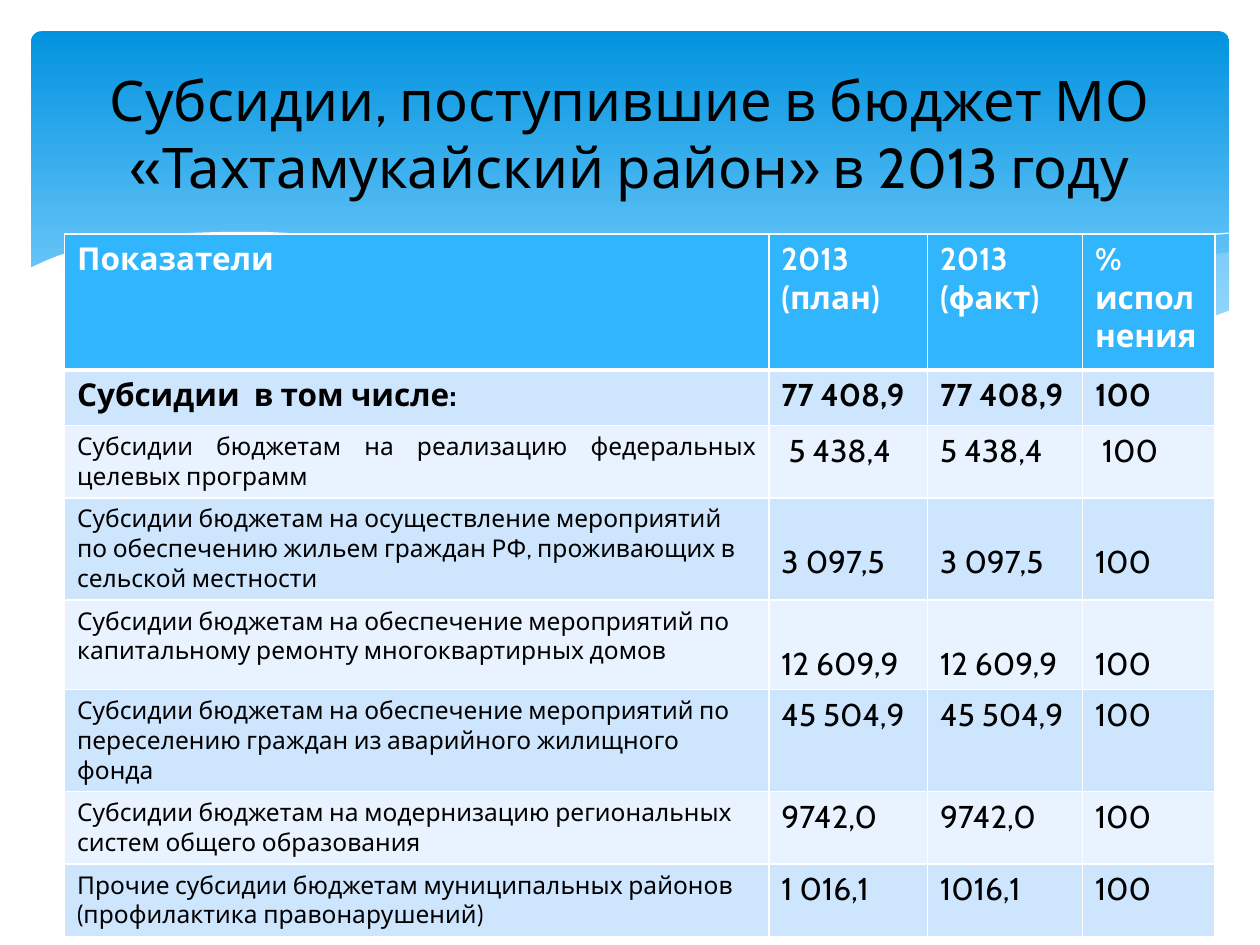
"""Build the slide on subsidies received by the district budget in 2013."""
from lxml import etree
from pptx import Presentation
from pptx.dml.color import RGBColor
from pptx.enum.shapes import MSO_SHAPE as SHAPE
from pptx.enum.text import MSO_ANCHOR as ANCHOR, PP_ALIGN as ALIGN
from pptx.oxml.ns import qn
from pptx.util import Cm, Pt

FONT = "Cabin"
WHITE, BLACK, HEAD = "FFFFFF", "000000", "31B6FD"
BANDS = ("CEE5FE", "E8F3FF")
TITLE = "Субсидии, поступившие в бюджет МО «Тахтамукайский район» в 2013 году"
ROWS = [
    ("Показатели", "2013 (план)", "2013 (факт)", "% исполнения"),
    ("Субсидии  в том числе:", "77 408,9", "77 408,9", "100"),
    ("Субсидии бюджетам на реализацию федеральных целевых программ", " 5 438,4", "5 438,4", " 100"),
    ("Субсидии бюджетам на осуществление мероприятий по обеспечению жильем граждан РФ, "
     "проживающих в сельской местности", "3 097,5", "3 097,5", "100"),
    ("Субсидии бюджетам на обеспечение мероприятий по капитальному ремонту многоквартирных домов",
     "12 609,9", "12 609,9", "100"),
    ("Субсидии бюджетам на обеспечение мероприятий по переселению граждан из аварийного жилищного фонда",
     "45 504,9", "45 504,9", "100"),
    ("Субсидии бюджетам на модернизацию региональных систем общего образования", "9742,0", "9742,0", "100"),
    ("Прочие субсидии бюджетам муниципальных районов (профилактика правонарушений)",
     "1 016,1", "1016,1", "100"),
]
COL_W = (14.2, 3.2, 3.12, 2.67)
ROW_H = (2.74, 1.12, 1.45, 2.06, 1.8, 2.06, 1.45, 1.45)
LOWERED, JUSTIFIED = (3, 4), 2

WAVE_UNIT = Cm(0.0254)
WAVES = [
    dict(fill="C6E7FC", alpha=29, pts=[
        (976, 200), (948, 204), (906, 213), (861, 223), (805, 237), (753, 248), (706, 257), (661, 265),
        (705, 271), (757, 276), (803, 278), (844, 277), (881, 273), (913, 267), (942, 259), (976, 247)]),
    dict(fill="C6E7FC", alpha=40, pts=[
        (893, 273), (837, 265), (775, 254), (706, 240), (629, 222), (584, 211), (541, 203), (502, 196),
        (465, 191), (420, 187), (380, 185), (344, 186), (313, 188), (286, 191), (342, 199), (404, 211),
        (449, 222), (530, 240), (601, 255), (665, 266), (722, 274), (773, 277), (818, 278), (857, 277)]),
    dict(line=WHITE, pts=[
        (309, 195), (344, 190), (387, 187), (433, 187), (489, 190), (556, 197), (636, 208), (727, 226),
        (795, 241), (869, 261), (907, 272)]),
    dict(line=WHITE, pts=[
        (613, 257), (672, 241), (748, 223), (806, 210), (866, 199), (910, 192), (951, 187), (975, 185)]),
    dict(fill=WHITE, pts=[
        (977, 246), (950, 256), (920, 265), (887, 271), (850, 275), (809, 277), (761, 275), (708, 270),
        (648, 262), (579, 250), (503, 233), (447, 220), (391, 207), (340, 197), (292, 190), (250, 186),
        (211, 184), (177, 184), (146, 185), (119, 187), (95, 191), (76, 195), (59, 199), (46, 203),
        (36, 207), (23, 213), (23, 329), (977, 329)]),
]


def rgb(value):
    return RGBColor.from_string(value)


def write(tf, text, size=18, color=BLACK, bold=False, align=ALIGN.LEFT):
    tf.word_wrap = True
    p = tf.paragraphs[0]
    p.alignment = align
    r = p.add_run()
    r.text = text
    r.font.name, r.font.size, r.font.bold = FONT, Pt(size), bold
    r.font.color.rgb = rgb(color)


def add_wave(s, pts, fill=None, alpha=100, line=None):
    builder = s.shapes.build_freeform(*pts[0], scale=WAVE_UNIT)
    builder.add_line_segments(pts[1:], close=fill is not None)
    sp = builder.convert_to_shape()
    sp.shadow.inherit = False
    if fill:
        sp.fill.solid()
        sp.fill.fore_color.rgb = rgb(fill)
        clr = sp.fill._xPr.find(".//" + qn("a:srgbClr"))
        etree.SubElement(clr, qn("a:alpha"), val=str(alpha * 1000))
    else:
        sp.fill.background()
    if line:
        sp.line.color.rgb = rgb(line)
        sp.line.width = Pt(0)
    else:
        sp.line.fill.background()


def style_cell(cell, fill, bottom):
    tc_pr = cell._tc.get_or_add_tcPr()
    for side, width in (("L", 1), ("R", 1), ("T", 1), ("B", bottom)):
        ln = etree.SubElement(tc_pr, qn(f"a:ln{side}"), w=str(Pt(width)))
        etree.SubElement(etree.SubElement(ln, qn("a:solidFill")), qn("a:srgbClr"), val=WHITE)
    cell.fill.solid()
    cell.fill.fore_color.rgb = rgb(fill)


def add_backdrop(s):
    sp = s.shapes.add_shape(SHAPE.ROUNDED_RECTANGLE, Cm(0.63), Cm(0.63), Cm(24.15), Cm(6.86))
    sp.adjustments[0] = 0.03
    sp.shadow.inherit = False
    sp.line.fill.background()
    sp.fill.gradient()
    sp.fill.gradient_angle = 270
    for stop, pos, color in zip(sp.fill.gradient_stops, (0, 0.9), ("0293E0", "83D3FE")):
        stop.position = pos
        stop.color.rgb = rgb(color)
    for wave in WAVES:
        add_wave(s, **wave)


def add_subsidy_table(s):
    frame = s.shapes.add_table(len(ROWS), len(COL_W), Cm(1.3), Cm(4.72), Cm(sum(COL_W)), Cm(sum(ROW_H)))
    table = frame.table
    for col, width in zip(table.columns, COL_W):
        col.width = Cm(width)
    for i, (row, height) in enumerate(zip(ROWS, ROW_H)):
        table.rows[i].height = Cm(height)
        for j, text in enumerate(row):
            cell = table.cell(i, j)
            style_cell(cell, BANDS[(i - 1) % 2] if i else HEAD, 1 if i else 3)
            if i in LOWERED and j:
                cell.margin_top = Cm(0.9)
            write(cell.text_frame, text, size=14 if i > 1 and j == 0 else 18,
                  color=BLACK if i else WHITE, bold=i < 2,
                  align=ALIGN.JUSTIFY if (i, j) == (JUSTIFIED, 0) else ALIGN.LEFT)


def main():
    prs = Presentation()
    prs.slide_width, prs.slide_height = Cm(25.4), Cm(19.05)
    s = prs.slides.add_slide(prs.slide_layouts[6])
    add_backdrop(s)
    add_subsidy_table(s)
    tf = s.shapes.add_textbox(Cm(1.27), Cm(0.94), Cm(22.86), Cm(3.48)).text_frame
    tf.vertical_anchor = ANCHOR.MIDDLE
    write(tf, TITLE, size=32, align=ALIGN.CENTER)
    prs.save("out.pptx")


if __name__ == "__main__":
    main()
